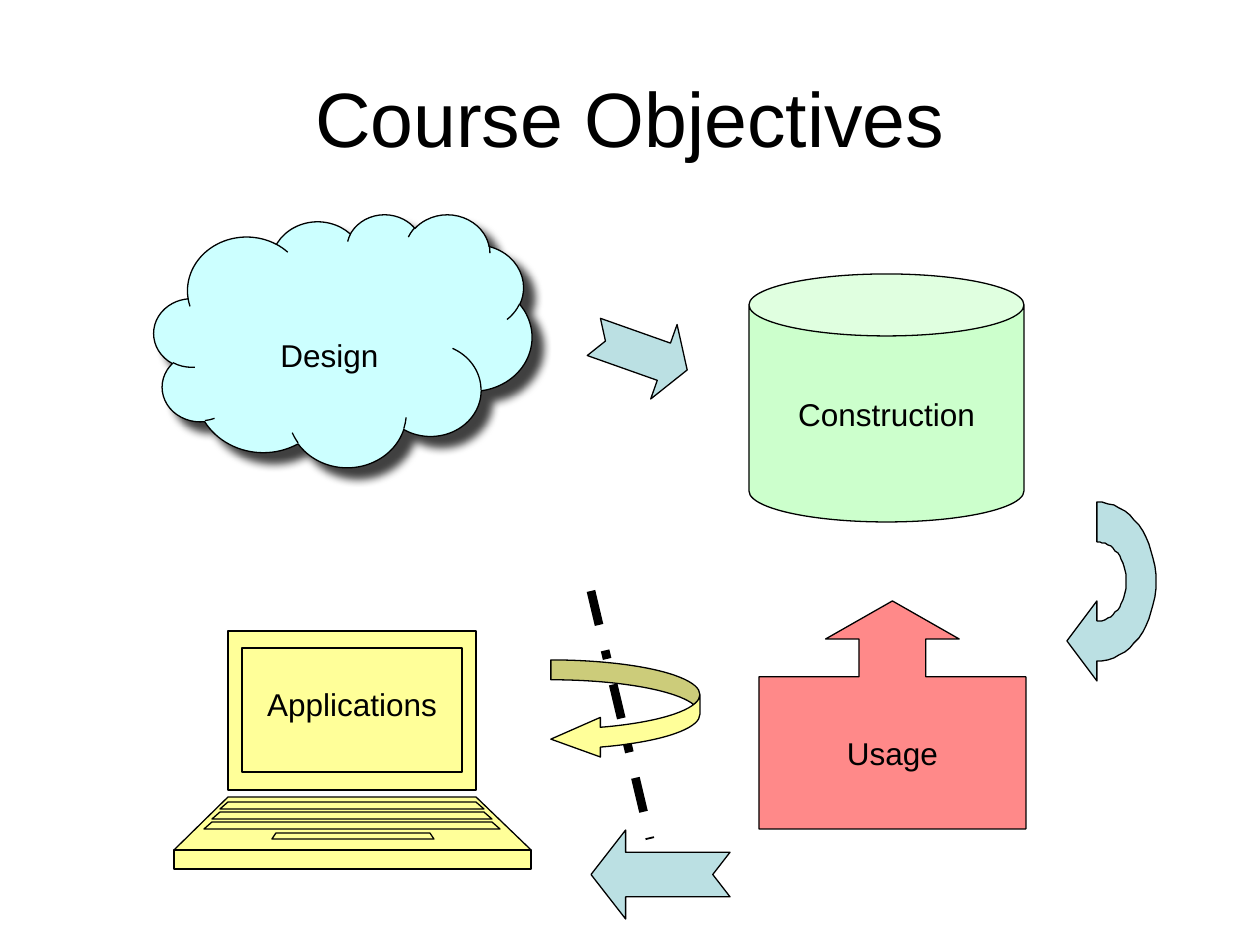
from math import cos, pi, sin

from lxml.etree import SubElement
from pptx import Presentation
from pptx.dml.color import RGBColor
from pptx.enum.dml import MSO_LINE
from pptx.enum.shapes import MSO_CONNECTOR, MSO_SHAPE
from pptx.enum.text import MSO_ANCHOR, PP_ALIGN
from pptx.oxml.ns import qn
from pptx.util import Pt

SCALE = 914400 / 126
COLORS = {
    "ink": "000000",
    "design": "CCFFFF",
    "construction": "CCFFCC",
    "applications": "FFFF99",
    "usage": "FF8989",
    "arrow": "BBE0E3",
}


def px(length):
    """Turn pixels into EMU."""
    return round(length * SCALE)


def color(name):
    """Return the named colour."""
    return RGBColor.from_string(COLORS[name])


def write(shape, text, size=18, wrap=False, anchor=MSO_ANCHOR.MIDDLE):
    """Put one centred line of text into a shape."""
    frame = shape.text_frame
    frame.word_wrap = wrap
    frame.vertical_anchor = anchor
    paragraph = frame.paragraphs[0]
    paragraph.text = text
    paragraph.alignment = PP_ALIGN.CENTER
    paragraph.font.name = "Arial"
    paragraph.font.size = Pt(size)
    paragraph.font.color.rgb = color("ink")


def paint(shape, fill):
    """Give a shape its fill and thin outline, without a shadow."""
    shape.shadow.inherit = False
    shape.fill.solid()
    shape.fill.fore_color.rgb = color(fill)
    shape.line.color.rgb = color("ink")
    shape.line.width = Pt(0.75)


def add_preset(slide, kind, box, fill, adjustments=(), rotation=0):
    """Add a painted preset shape in the box."""
    shape = slide.shapes.add_shape(kind, *map(px, box))
    paint(shape, fill)
    for index, value in enumerate(adjustments):
        shape.adjustments[index] = value
    shape.rotation = rotation
    return shape


def add_outline(slide, points, fill):
    """Add a painted closed polygon."""
    builder = slide.shapes.build_freeform(*points[0], scale=SCALE)
    builder.add_line_segments(points[1:], close=True)
    shape = builder.convert_to_shape()
    paint(shape, fill)
    return shape


def add_title(slide, box):
    """Add the slide title."""
    title = slide.shapes.add_textbox(*map(px, box))
    write(title, "Course Objectives", size=44, wrap=True)


def add_design(slide, box):
    """Add the cloud with its soft shadow."""
    cloud = add_preset(slide, MSO_SHAPE.CLOUD, box, "design")
    write(cloud, "Design", wrap=True, anchor=MSO_ANCHOR.TOP)
    cloud.text_frame.margin_top = px(box[3] / 3)
    effects = cloud._element.spPr.find(qn("a:effectLst"))
    shadow = SubElement(effects, qn("a:outerShdw"), blurRad=str(Pt(5)),
                        dist=str(Pt(8.5)), dir="2700000", algn="ctr", rotWithShape="0")
    tint = SubElement(shadow, qn("a:srgbClr"), val=COLORS["ink"])
    SubElement(tint, qn("a:alpha"), val="75000")


def add_applications(slide, box):
    """Add the laptop from trapezoids that mirror about its middle."""
    left, top, width, height = box
    middle = left + width / 2
    half = width / 2

    def add_part(half_top, half_bottom, upper, lower):
        """Add one trapezoid of the laptop."""
        return add_outline(slide, [
            (middle - half_top, top + upper), (middle + half_top, top + upper),
            (middle + half_bottom, top + lower), (middle - half_bottom, top + lower),
        ], "applications")

    add_part(124, 124, 0, 159)
    add_part(124, half, 166, 219)
    add_part(half, half, 219, height)
    screen = add_part(110, 110, 17, 141)
    for key_row in range(3):
        add_part(124 + 8 * key_row, 132 + 8 * key_row, 171 + 10 * key_row, 178 + 10 * key_row)
    add_part(77, 81, 202, 208)
    write(screen, "Applications")
    screen.text_frame.margin_bottom = px(18)


def add_bent_arrow(slide, box):
    """Add the half-ring arrow that turns down and points left."""
    left, top, width, height = box
    axis = left + width / 3
    outer_x, outer_y = width * 2 / 3, height * 4 / 9
    middle = top + outer_y
    steps = 32

    def half_ring(factor):
        """List the points of the right half of an ellipse, downwards."""
        angles = [pi * step / steps - pi / 2 for step in range(steps + 1)]
        return [(axis + factor * outer_x * cos(angle), middle + factor * outer_y * sin(angle))
                for angle in angles]

    head = [(axis, top + height), (left, middle + 0.75 * outer_y),
            (axis, middle + 0.25 * outer_y)]
    add_outline(slide, half_ring(1) + head + half_ring(0.5)[::-1], "arrow")


def add_curved_arrow(slide, box):
    """Add the yellow arrow that curves back to the left."""
    arrow = add_preset(slide, MSO_SHAPE.CURVED_RIGHT_ARROW, box, "applications", (0.2, 0.4, 0.5))
    arrow._element.spPr.get_or_add_xfrm().set("flipH", "1")


def add_divider(slide, box):
    """Add the thick dashed line across the box."""
    left, top, width, height = box
    line = slide.shapes.add_connector(
        MSO_CONNECTOR.STRAIGHT, px(left), px(top), px(left + width), px(top + height))
    line.line.color.rgb = color("ink")
    line.line.width = Pt(5)
    line.line.dash_style = MSO_LINE.DASH_DOT
    SubElement(line._element.spPr, qn("a:effectLst"))


def main():
    """Build and save the slide."""
    presentation = Presentation()
    presentation.slide_width, presentation.slide_height = px(1260), px(945)
    slide = presentation.slides.add_slide(presentation.slide_layouts[6])
    add_title(slide, (63, 38, 1134, 157))
    add_design(slide, (154, 214, 378, 253))
    construction = add_preset(slide, MSO_SHAPE.CAN, (749, 274, 275, 248), "construction", (0.25,))
    write(construction, "Construction")
    add_applications(slide, (174, 631, 357, 238))
    usage = add_preset(slide, MSO_SHAPE.UP_ARROW_CALLOUT, (759, 601, 267, 228), "usage",
                       (0.293, 0.293, 0.167, 0.667))
    write(usage, "Usage")
    notched = MSO_SHAPE.NOTCHED_RIGHT_ARROW
    add_preset(slide, notched, (591, 314, 99, 79), "arrow", (0.5, 0.312), 19.5)
    add_bent_arrow(slide, (1067, 502, 89, 179))
    add_preset(slide, notched, (591, 830, 139, 89), "arrow", (0.5, 0.389), 180)
    add_curved_arrow(slide, (551, 660, 149, 99))
    add_divider(slide, (591, 591, 59, 248))
    presentation.save("out.pptx")


if __name__ == "__main__":
    main()
